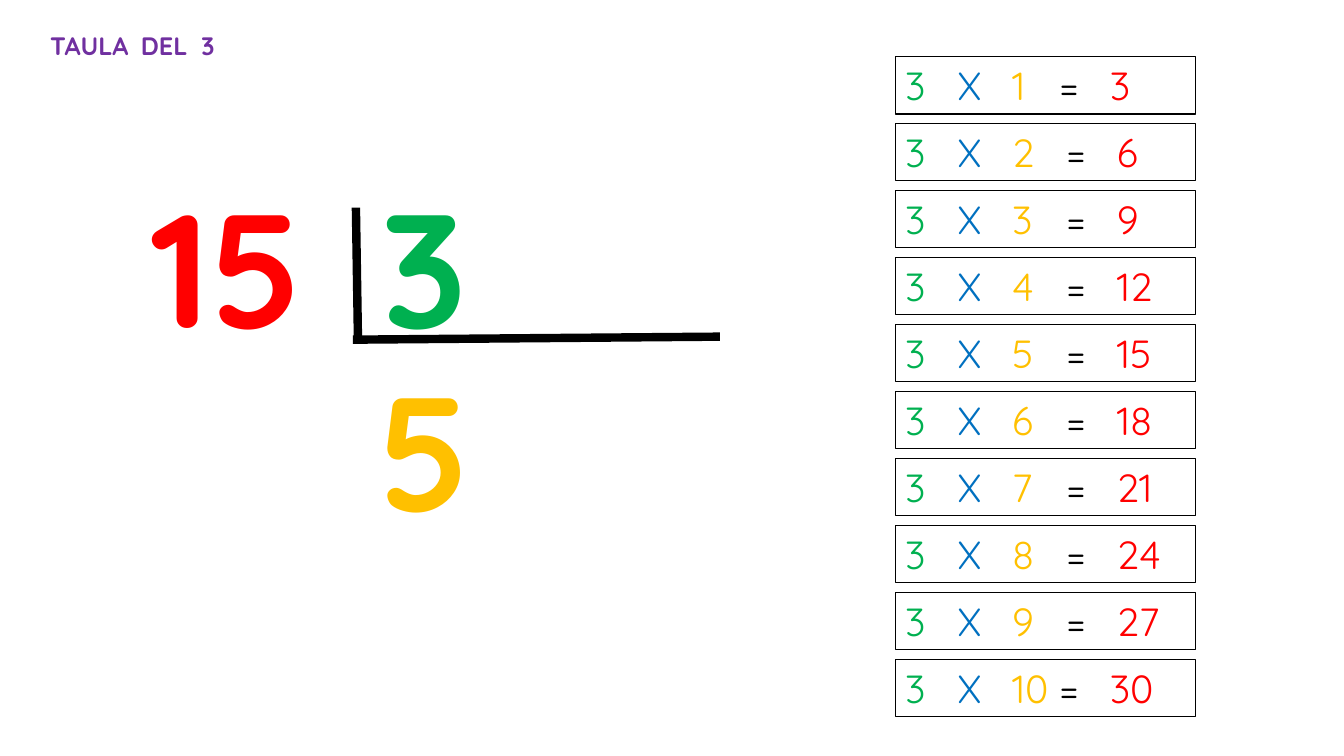
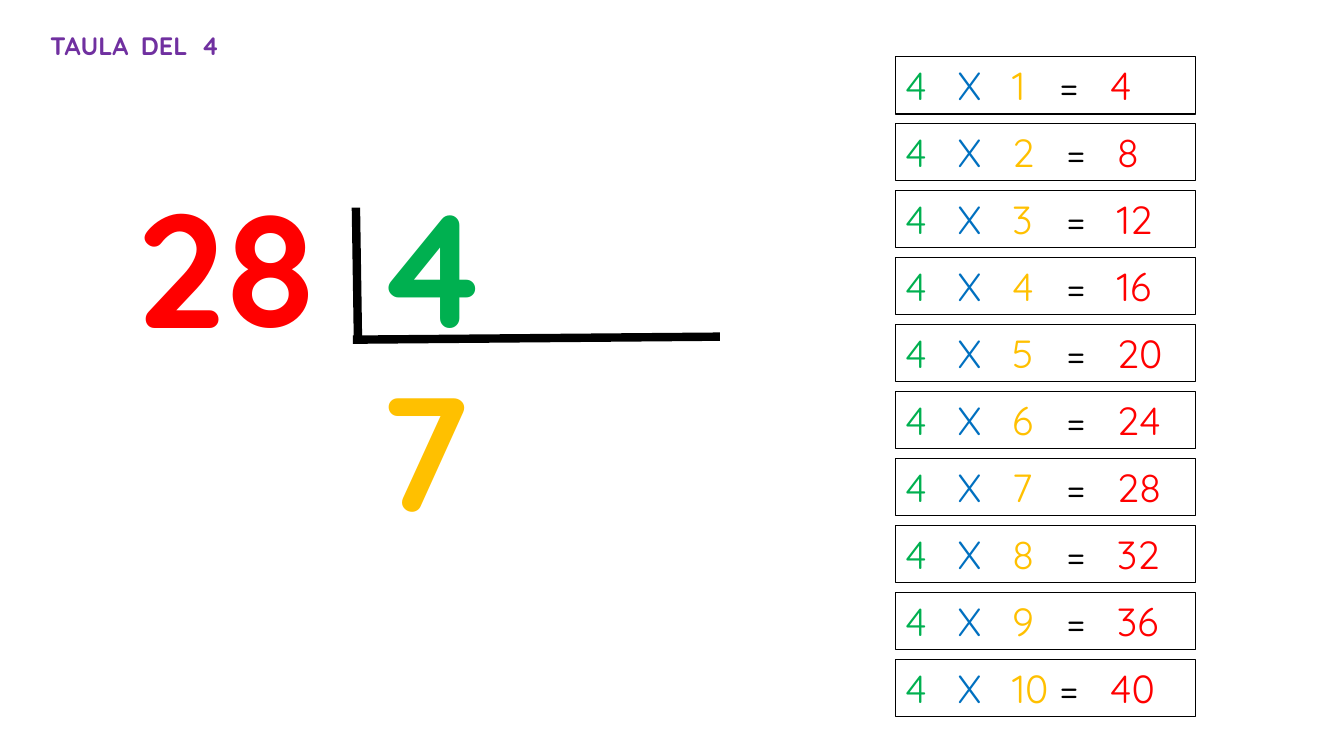
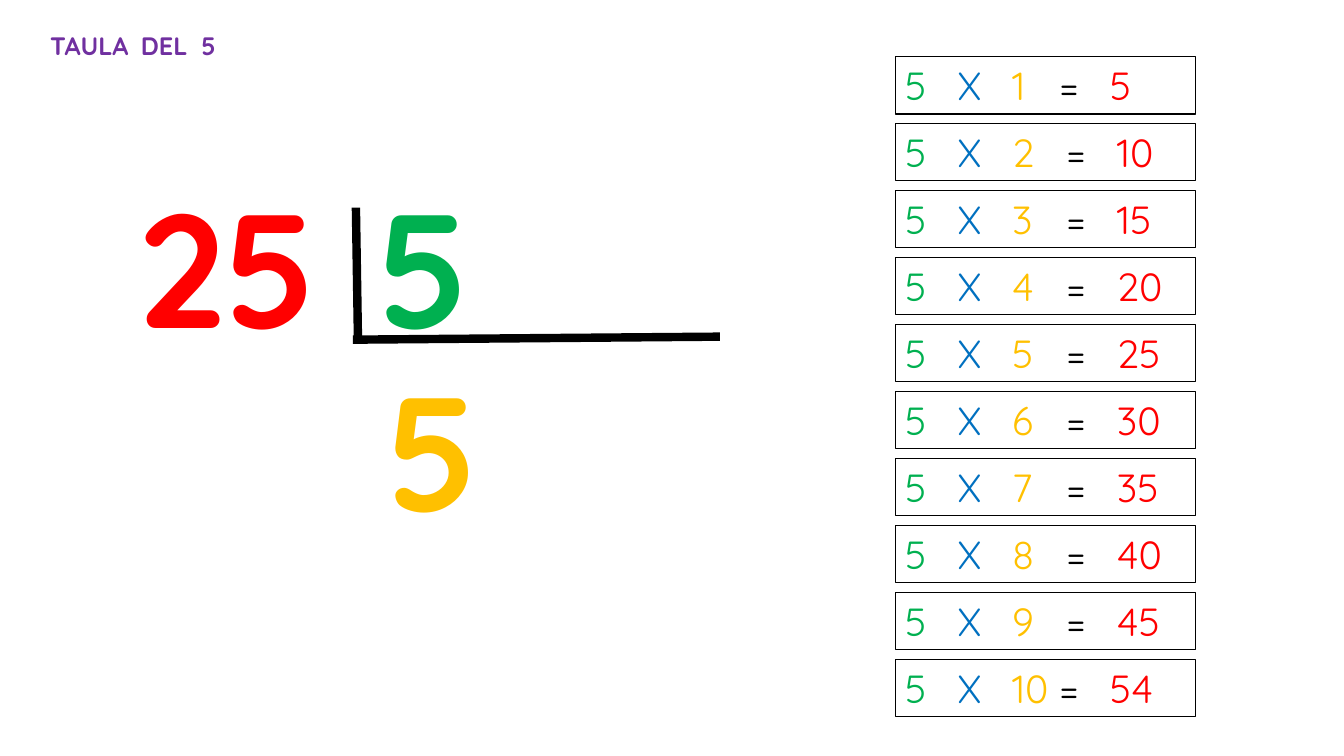
from lxml import etree
from pptx import Presentation, util as u
from pptx.dml.color import RGBColor
from pptx.enum import shapes, text
from pptx.oxml.ns import qn

COLORS = {
    "factor": "00B050", "times": "0070C0", "count": "FFC000", "result": "FF0000",
    "title": "7030A0", "ink": "000000", "paper": "FFFFFF",
}
FONT = "Quicksand"

# Rows of the multiplication table
ROWS = 10
ROW_LEFT, ROW_WIDTH, ROW_HEIGHT = 8.88, 2.98, 0.57
FIRST_TOP, LAST_TOP = 0.56, 6.54
ROW_STEP = (LAST_TOP - FIRST_TOP) / (ROWS - 1)
ROW_TABS = (0.52, 1.06, 1.6, 2.1)
END_ROW_TABS = (0.52, 1.06, 1.53, 2.03)  # first and last rows are set tighter
TITLE_TABS = (0.9, 1.5)

# Table, dividend, quotient, left of the quotient, results that differ
LESSONS = [
    (3, 15, 5, 3.63, {}),
    (4, 28, 7, 3.63, {}),
    (5, 25, 5, 3.71, {10: 54}),
]


def rgb(name):
    return RGBColor.from_string(COLORS[name])


def write(tf, parts, size=28, bold=False, align=text.PP_ALIGN.LEFT, tabs=()):
    """Write one paragraph of (text, colour name) parts."""
    tf.word_wrap = True
    tf.auto_size = text.MSO_AUTO_SIZE.SHAPE_TO_FIT_TEXT
    p = tf.paragraphs[0]
    p.alignment = align
    if tabs:
        stops = etree.SubElement(p._p.get_or_add_pPr(), qn("a:tabLst"))
        for pos in tabs:
            etree.SubElement(stops, qn("a:tab"), pos=str(u.Inches(pos)), algn="l")
    for words, color in parts:
        r = p.add_run()
        r.text = words
        r.font.name = FONT
        r.font.size = u.Pt(size)
        r.font.bold = bold
        r.font.color.rgb = rgb(color)


class Deck:
    def __init__(self):
        self.prs = Presentation()
        self.prs.slide_width = u.Inches(13.33)
        self.prs.slide_height = u.Inches(7.5)
        self.s = None

    def new_slide(self):
        self.s = self.prs.slides.add_slide(self.prs.slide_layouts[6])

    def label(self, box, parts, **style):
        sp = self.s.shapes.add_textbox(*map(u.Inches, box))
        write(sp.text_frame, parts, bold=True, **style)

    def title(self, table):
        self.label((0.4, 0.25, 2.63, 0.4), [(f"TAULA\tDEL\t{table}", "title")],
                   size=18, tabs=TITLE_TABS)

    def number(self, value, color, left, top, width=1.18):
        self.label((left, top, width, 2.04), [(str(value), color)],
                   size=115, align=text.PP_ALIGN.CENTER)

    def division_bracket(self):
        group = self.s.shapes.add_group_shape()
        for ends in ((3.53, 2.06, 3.55, 3.35), (3.5, 3.37, 7.14, 3.34)):
            line = group.shapes.add_connector(
                shapes.MSO_CONNECTOR.STRAIGHT, *map(u.Inches, ends))
            line.line.color.rgb = rgb("ink")
            line.line.width = u.Pt(6)
            etree.SubElement(line._element.spPr, qn("a:effectLst"))

    def product_row(self, table, count, result):
        top = FIRST_TOP + (count - 1) * ROW_STEP
        sp = self.s.shapes.add_shape(
            shapes.MSO_SHAPE.RECTANGLE,
            *map(u.Inches, (ROW_LEFT, top, ROW_WIDTH, ROW_HEIGHT)))
        sp.shadow.inherit = False
        sp.fill.solid()
        sp.fill.fore_color.rgb = rgb("paper")
        sp.line.color.rgb = rgb("ink")
        sp.line.width = u.Pt(1)
        sp.text_frame.vertical_anchor = text.MSO_ANCHOR.TOP
        parts = [(f"{table}\t", "factor"), ("X\t", "times"), (str(count), "count"),
                 ("\t=\t", "ink"), (str(result), "result")]
        write(sp.text_frame, parts,
              tabs=END_ROW_TABS if count in (1, ROWS) else ROW_TABS)


def main():
    deck = Deck()
    for table, dividend, quotient, quotient_left, exceptions in LESSONS:
        deck.new_slide()
        # Division
        deck.number(table, "factor", 3.62, 1.61)
        deck.division_bracket()
        deck.number(dividend, "result", 1.19, 1.61, width=2.14)
        deck.number(quotient, "count", quotient_left, 3.43)
        # Multiplication table
        for count in range(1, ROWS + 1):
            deck.product_row(table, count, exceptions.get(count, table * count))
        deck.title(table)
    deck.prs.save("out.pptx")


if __name__ == "__main__":
    main()
